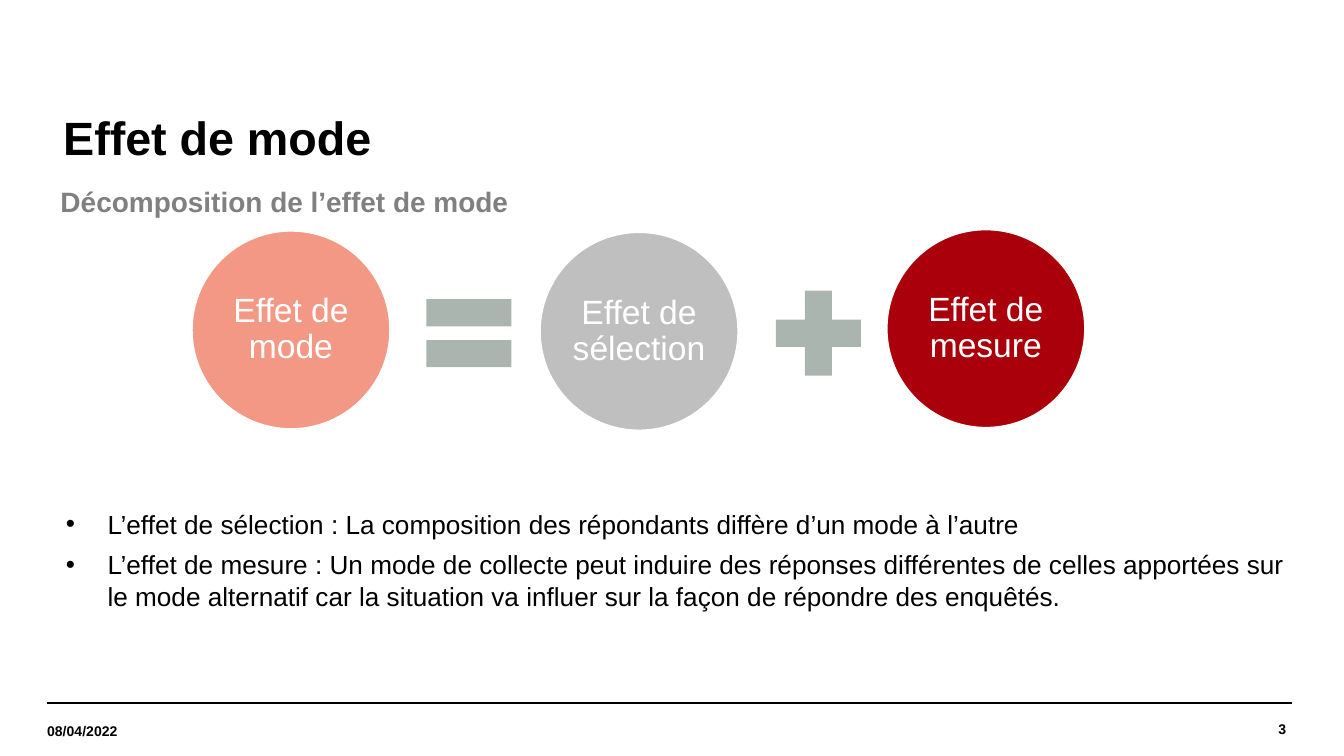
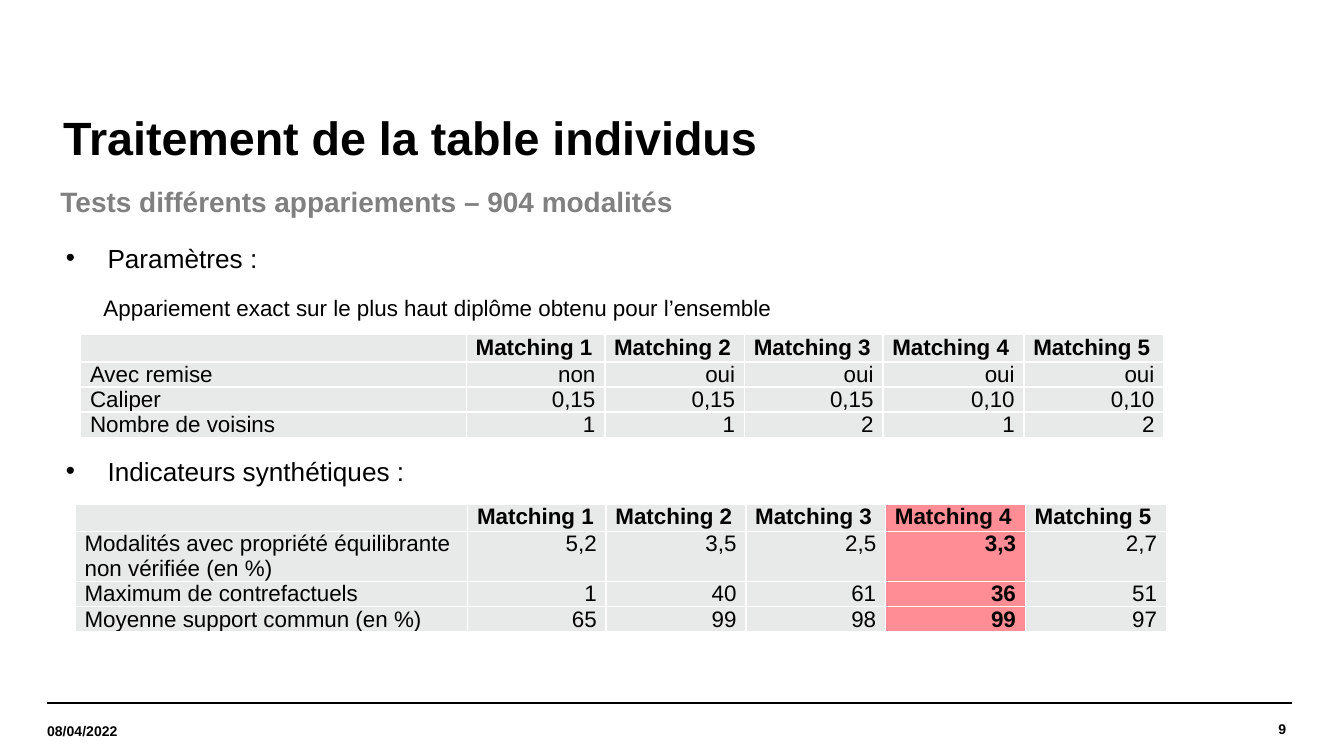
from pptx import Presentation
from pptx.dml.color import RGBColor
from pptx.enum.shapes import MSO_CONNECTOR, MSO_SHAPE
from pptx.enum.text import MSO_ANCHOR, MSO_AUTO_SIZE, PP_ALIGN
from pptx.oxml.ns import qn
from pptx.util import Inches, Pt
from lxml import etree

LEFT, RIGHT, MID, JUST = PP_ALIGN.LEFT, PP_ALIGN.RIGHT, PP_ALIGN.CENTER, PP_ALIGN.JUSTIFY
TOP, CENTER = MSO_ANCHOR.TOP, MSO_ANCHOR.MIDDLE
FIXED = MSO_AUTO_SIZE.NONE
LINE = MSO_CONNECTOR.STRAIGHT
OVAL, PLUS, EQUAL = MSO_SHAPE.OVAL, MSO_SHAPE.MATH_PLUS, MSO_SHAPE.MATH_EQUAL

FONT = "Arial"
DATE = "08/04/2022"
COLORS = {
    "black": "000000", "white": "FFFFFF", "gray": "808080",
    "mode": "F29885", "select": "BFBFBF", "measure": "A9000B",
    "sign": "ABB5B0", "cell": "E7EAE9", "mark": "FF8D95",
}
SIDES = ("a:lnL", "a:lnR", "a:lnT", "a:lnB")
HEAD = [""] + [f"Matching {n}" for n in range(1, 6)]


def color(name):
    return RGBColor.from_string(COLORS[name])


def place(shape, box):
    shape.left, shape.top, shape.width, shape.height = map(Inches, box)


def setup(frame, anchor=TOP, inset=0.0):
    frame.word_wrap = True
    frame.auto_size = FIXED
    frame.vertical_anchor = anchor
    frame.margin_left = frame.margin_right = Inches(inset)
    frame.margin_top = frame.margin_bottom = Inches(inset)


def style(para, size, tint="black", bold=False, align=LEFT):
    para.alignment = align
    for run in para.runs:
        font = run.font
        font.name, font.size, font.bold = FONT, Pt(size), bold
        font.color.rgb = color(tint)


def space(para, before=0, after=0, line=1.0):
    para.space_before, para.space_after = Pt(before), Pt(after)
    para.line_spacing = line


def indent(para, margin, first, mark=None):
    props = para._p.get_or_add_pPr()
    props.set("marL", str(Inches(margin)))
    props.set("indent", str(Inches(first)))
    if mark:
        etree.SubElement(props, qn("a:buChar"), char=mark)
    else:
        etree.SubElement(props, qn("a:buNone"))


def label(slide, box, text, align):
    shape = slide.shapes.add_textbox(*map(Inches, box))
    setup(shape.text_frame, CENTER)
    shape.text_frame.text = text
    style(shape.text_frame.paragraphs[0], 7.5, bold=True, align=align)


def footer(slide, number):
    for left in (0.35, 0.39):
        rule = slide.shapes.add_connector(
            LINE, Inches(left), Inches(5.23), Inches(left + 9.22), Inches(5.23))
        rule.line.color.rgb = color("black")
        rule.line.width = Pt(0.8)
        etree.SubElement(rule._element.spPr, qn("a:effectLst"))
    label(slide, (8.09, 5.23, 1.48, 0.39), str(number), RIGHT)
    label(slide, (0.35, 5.25, 1.28, 0.38), DATE, LEFT)


def header(slide, title, sub):
    shape = slide.shapes.title
    place(shape, (0.35, 0.75, 9.21, 0.59))
    setup(shape.text_frame, CENTER)
    shape.text_frame.margin_left = Inches(0.1)
    shape.text_frame.text = title
    para = shape.text_frame.paragraphs[0]
    space(para, line=0.9)
    indent(para, 0.02, 0)
    style(para, 25, bold=True)

    shape = slide.placeholders[1]
    place(shape, (0.35, 1.37, 9.21, 0.27))
    setup(shape.text_frame)
    shape.text_frame.text = sub
    para = shape.text_frame.paragraphs[0]
    space(para, after=8)
    indent(para, 0.01, 0.09)
    style(para, 15, "gray", True)


def points(slide, box, items):
    shape = slide.placeholders[2]
    place(shape, box)
    frame = shape.text_frame
    setup(frame)
    frame.text = "\n".join(text for text, _, _ in items)
    for para, (_, level, before) in zip(frame.paragraphs, items):
        para.level = level
        if level:
            space(para, before, 6)
            indent(para, 0.38, 0)
            style(para, 12)
        else:
            space(para, before, 5)
            indent(para, 0.41, -0.31, "•")
            style(para, 14)


def figure(slide, kind, box, fill):
    shape = slide.shapes.add_shape(kind, *map(Inches, box))
    shape.shadow.inherit = False
    shape.fill.solid()
    shape.fill.fore_color.rgb = color(fill)
    shape.line.fill.background()
    return shape


def formula(slide, left, top):
    discs = (
        (0, 0.01, "Effet de mode", "mode"),
        (2.59, 0.02, "Effet de sélection", "select"),
        (5.17, 0, "Effet de mesure", "measure"),
    )
    for x, y, text, fill in discs:
        disc = figure(slide, OVAL, (left + x, top + y, 1.49, 1.49), fill)
        disc.line.color.rgb = color("white")
        disc.line.width = Pt(2)
        setup(disc.text_frame, CENTER, 0.03)
        disc.text_frame.text = text
        para = disc.text_frame.paragraphs[0]
        space(para, line=0.9)
        style(para, 18, "white", align=MID)
    for x, kind in ((1.64, EQUAL), (4.24, PLUS)):
        figure(slide, kind, (left + x, top + 0.35, 0.86, 0.86), "sign")


def border(cell):
    props = cell._tc.get_or_add_tcPr()
    for spot, side in enumerate(SIDES):
        edge = etree.Element(qn(side), w=str(Pt(1)))
        fill = etree.SubElement(edge, qn("a:solidFill"))
        etree.SubElement(fill, qn("a:srgbClr"), val=COLORS["white"])
        props.insert(spot, edge)


def grid(slide, box, cols, heights, rows, align, mark=None):
    data = [HEAD] + rows
    shape = slide.shapes.add_table(len(data), len(cols), *map(Inches, box))
    table = shape.table
    table.first_row = table.horz_banding = False
    for col, width in zip(table.columns, cols):
        col.width = Inches(width)
    for row, height in zip(table.rows, heights):
        row.height = Inches(height)
    place(shape, box)
    for r, line in enumerate(data):
        for c, text in enumerate(line):
            cell = table.cell(r, c)
            cell.margin_left = cell.margin_right = Inches(0.07)
            cell.margin_top = cell.margin_bottom = 0
            cell.fill.solid()
            cell.fill.fore_color.rgb = color("mark" if c == mark else "cell")
            border(cell)
            cell.text = text
            para = cell.text_frame.paragraphs[0]
            style(para, 12, bold=r == 0 or c == mark,
                  align=RIGHT if r and c else align)
            if not text:
                etree.SubElement(para._p, qn("a:endParaRPr"), sz="1200")


def page(deck, number, title, sub):
    slide = deck.slides.add_slide(deck.slide_layouts[3])
    footer(slide, number)
    header(slide, title, sub)
    return slide


def effect(deck):
    slide = page(deck, 3, "Effet de mode", "Décomposition de l’effet de mode")
    points(slide, (0.39, 3.78, 9.21, 1.47), [
        ("L’effet de sélection : La composition des répondants diffère "
         "d’un mode à l’autre", 0, 0),
        ("L’effet de mesure : Un mode de collecte peut induire des réponses "
         "différentes de celles apportées sur le mode alternatif car la situation "
         "va influer sur la façon de répondre des enquêtés.", 0, 0),
    ])
    formula(slide, 1.42, 1.7)


def tests(deck):
    slide = page(deck, 9, "Traitement de la table individus",
                 "Tests différents appariements – 904 modalités")
    points(slide, (0.39, 1.8, 9.21, 3.15), [
        ("Paramètres :", 0, 0),
        ("Appariement exact sur le plus haut diplôme obtenu pour l’ensemble", 1, 6),
        ("Indicateurs synthétiques :", 0, 66),
    ])
    grid(slide, (0.6, 2.49, 8.05, 0.8),
         (2.87, 1.03, 1.04, 1.03, 1.05, 1.04), [0.18] * 4, [
        ["Avec remise", "non", "oui", "oui", "oui", "oui"],
        ["Caliper", "0,15", "0,15", "0,15", "0,10", "0,10"],
        ["Nombre de voisins", "1", "1", "2", "1", "2"],
    ], JUST)
    grid(slide, (0.56, 3.75, 8.1, 1),
         (2.92, 1.03, 1.04, 1.04, 1.04, 1.05), (0.18, 0.36, 0.18, 0.18), [
        ["Modalités avec propriété équilibrante non vérifiée (en %)",
         "5,2", "3,5", "2,5", "3,3", "2,7"],
        ["Maximum de contrefactuels", "1", "40", "61", "36", "51"],
        ["Moyenne support commun (en %)", "65", "99", "98", "99", "97"],
    ], LEFT, 4)


def main():
    deck = Presentation()
    deck.slide_width = Inches(10)
    deck.slide_height = deck.slide_width * 9 // 16
    effect(deck)
    tests(deck)
    deck.save("out.pptx")


if __name__ == "__main__":
    main()
